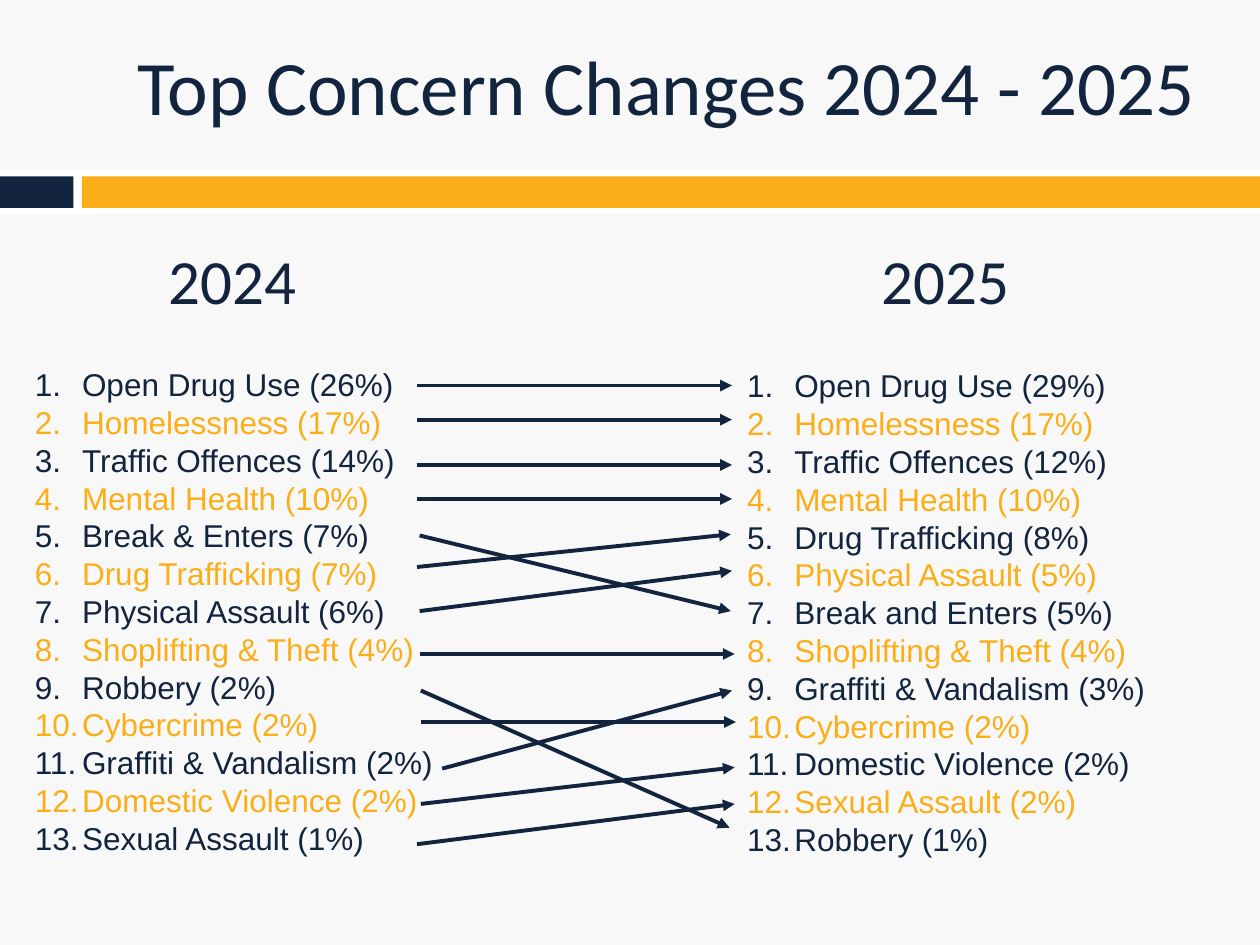
from dataclasses import dataclass

from lxml.etree import SubElement
from pptx import Presentation
from pptx.dml.color import RGBColor
from pptx.enum.shapes import MSO_CONNECTOR as Connector, MSO_SHAPE as Shape
from pptx.enum.text import MSO_ANCHOR as Anchor, PP_ALIGN as Align
from pptx.oxml.ns import qn
from pptx.util import Pt


@dataclass(frozen=True)
class Theme:
    """Colours, fonts and type sizes of the slide."""
    paper: RGBColor = RGBColor.from_string("F8F8F8")
    white: RGBColor = RGBColor.from_string("FFFFFF")
    navy: RGBColor = RGBColor.from_string("13243E")
    gold: RGBColor = RGBColor.from_string("FBAE18")
    heading_font: str = "Calibri"
    list_font: str = "Arial"
    title_size: int = 44
    year_size: int = 36
    list_size: int = 18


THEME = Theme()
INDENT = 27

CONCERNS_2024 = (
    "Open Drug Use (26%)", "Homelessness (17%)", "Traffic Offences (14%)",
    "Mental Health (10%)", "Break & Enters (7%)", "Drug Trafficking (7%)",
    "Physical Assault (6%)", "Shoplifting & Theft (4%)", "Robbery (2%)",
    "Cybercrime (2%)", "Graffiti & Vandalism (2%)",
    "Domestic Violence (2%)", "Sexual Assault (1%)",
)
CONCERNS_2025 = (
    "Open Drug Use (29%)", "Homelessness (17%)", "Traffic Offences (12%)",
    "Mental Health (10%)", "Drug Trafficking (8%)", "Physical Assault (5%)",
    "Break and Enters (5%)", "Shoplifting & Theft (4%)",
    "Graffiti & Vandalism (3%)", "Cybercrime (2%)",
    "Domestic Violence (2%)", "Sexual Assault (2%)", "Robbery (1%)",
)
RANK_MOVES = (
    (238.3, 220.3, 418.3, 220.3),
    (238.3, 239.8, 418.3, 239.8),
    (238.3, 265.7, 418.3, 265.7),
    (238.3, 285.1, 418.3, 285.1),
    (239.8, 306, 417.6, 349.2),
    (238.3, 324, 417.6, 305.3),
    (239.8, 349.2, 418.3, 326.2),
    (239.8, 373.7, 419.8, 373.7),
    (240.5, 394.6, 416.9, 473),
    (240.5, 412.6, 420.5, 412.6),
    (252.7, 439.2, 418.3, 394.6),
    (240.5, 459.4, 419.8, 438.5),
    (238.3, 482.4, 419.8, 459.4),
)


def apply(target, formats):
    """Set each named format value on the target."""
    for name, value in formats.items():
        setattr(target, name, value)


def add_band(slide, left, top, width, height, colour):
    """Draw one plain piece of the divider."""
    band = slide.shapes.add_shape(Shape.RECTANGLE, *map(Pt, (left, top, width, height)))
    band.shadow.inherit = False
    band.fill.solid()
    band.fill.fore_color.rgb = colour
    band.line.fill.background()


def add_frame(slide, left, top, width, height, anchor=Anchor.TOP):
    """Add a wrapping text box and return its text frame."""
    frame = slide.shapes.add_textbox(*map(Pt, (left, top, width, height))).text_frame
    apply(frame, {"word_wrap": True, "vertical_anchor": anchor})
    return frame


def write(paragraph, text, font, size, colour):
    """Write left-aligned text in the given style."""
    paragraph.alignment = Align.LEFT
    run = paragraph.add_run()
    run.text = text
    apply(run.font, {"name": font, "size": Pt(size)})
    run.font.color.rgb = colour


def add_heading(slide, text, box, size, anchor=Anchor.TOP):
    """Add a navy heading."""
    frame = add_frame(slide, *box, anchor)
    write(frame.paragraphs[0], text, THEME.heading_font, size, THEME.navy)


def add_ranking(slide, left, top, concerns):
    """Add a numbered list whose rows alternate navy and gold."""
    frame = add_frame(slide, left, top, 330, 312.5)
    for row, concern in enumerate(concerns):
        paragraph = frame.add_paragraph() if row else frame.paragraphs[0]
        properties = paragraph._p.get_or_add_pPr()
        properties.set("marL", str(Pt(INDENT)))
        properties.set("indent", str(-Pt(INDENT)))
        SubElement(properties, qn("a:buFont"), typeface="+mj-lt")
        SubElement(properties, qn("a:buAutoNum"), type="arabicPeriod")
        colour = THEME.gold if row % 2 else THEME.navy
        write(paragraph, concern, THEME.list_font, THEME.list_size, colour)


def add_move(slide, *ends):
    """Draw an arrow from a 2024 rank to a 2025 rank."""
    move = slide.shapes.add_connector(Connector.STRAIGHT, *map(Pt, ends))
    move.line.width = Pt(2.25)
    move.line.color.rgb = THEME.navy
    SubElement(move.line._get_or_add_ln(), qn("a:tailEnd"), type="triangle")
    SubElement(move._element.spPr, qn("a:effectLst"))


def main():
    """Build and save the slide."""
    deck = Presentation()
    apply(deck, {"slide_width": Pt(720), "slide_height": Pt(540)})
    slide = deck.slides.add_slide(deck.slide_layouts[6])
    slide.background.fill.solid()
    slide.background.fill.fore_color.rgb = THEME.paper

    add_band(slide, 0, 97.2, 720, 25.2, THEME.white)
    add_band(slide, 0, 100.8, 42, 18, THEME.navy)
    add_band(slide, 46.8, 100.8, 673.2, 18, THEME.gold)
    add_heading(slide, "Top Concern Changes 2024 - 2025", (71.3, 9.4, 642.2, 77.8),
                THEME.title_size, Anchor.MIDDLE)

    add_heading(slide, "2024", (89.5, 134.6, 88, 51), THEME.year_size)
    add_ranking(slide, 12.8, 205.2, CONCERNS_2024)
    add_ranking(slide, 419.8, 205.9, CONCERNS_2025)
    for move in RANK_MOVES:
        add_move(slide, *move)
    add_heading(slide, "2025", (496.8, 134.6, 88, 51), THEME.year_size)
    deck.save("out.pptx")


if __name__ == "__main__":
    main()
